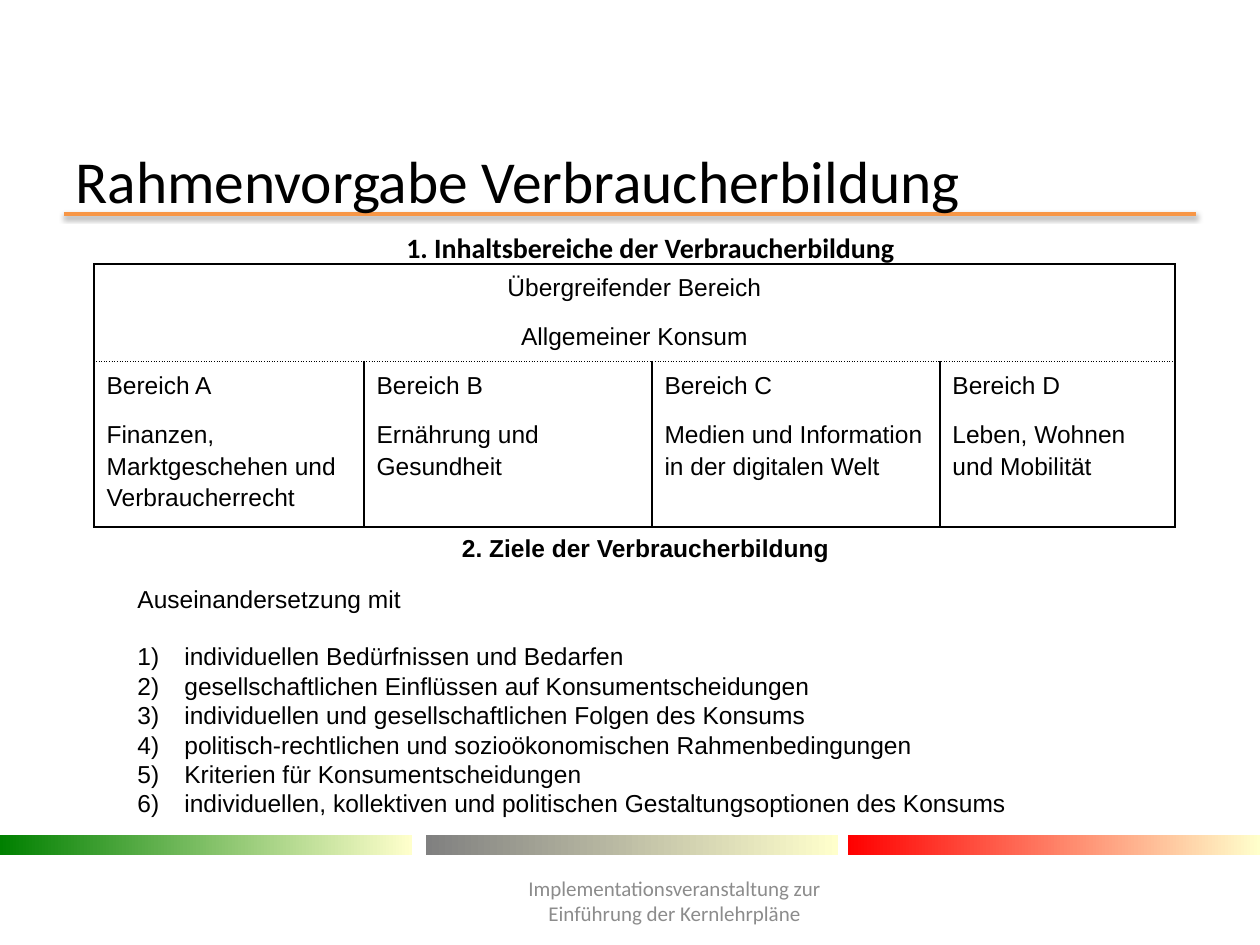
from lxml.etree import SubElement
from pptx import Presentation
from pptx.dml.color import RGBColor
from pptx.enum.shapes import MSO_CONNECTOR, MSO_SHAPE
from pptx.enum.text import MSO_ANCHOR, PP_ALIGN
from pptx.oxml.ns import qn
from pptx.util import Emu, Pt

BLACK = "000000"
CENTER = {"alignment": PP_ALIGN.CENTER}
SPACED = {"line_spacing": 1.15, "space_after": Pt(10)}


def px(length):
    return Emu(round(length * 914400 / 126))


def color(value):
    return RGBColor.from_string(value)


def assign(target, values):
    for name, value in values.items():
        setattr(target, name, value)


def add_xml(parent, tag, **attributes):
    return SubElement(parent, qn(tag), {key: str(value) for key, value in attributes.items()})


class SlideBuilder:
    body = {"name": "Arial", "size": Pt(14), "bold": False}

    def __init__(self, page):
        self.page = page

    def add_text(self, para, text, paragraph_format, font=None, ink=BLACK):
        assign(para, paragraph_format)
        span = para.add_run()
        span.text = text
        assign(span.font, {**self.body, **(font or {})})
        span.font.color.rgb = color(ink)

    def textbox(self, left, top, width, height, anchor=MSO_ANCHOR.TOP):
        box = self.page.shapes.add_textbox(px(left), px(top), px(width), px(height))
        assign(box.text_frame, {"word_wrap": True, "vertical_anchor": anchor})
        return box.text_frame

    def rule(self, left, right, y, ink, width):
        line = self.page.shapes.add_connector(
            MSO_CONNECTOR.STRAIGHT, px(left), px(y), px(right), px(y))
        line.line.color.rgb = color(ink)
        line.line.width = Pt(width)
        effects = add_xml(line._element.spPr, "a:effectLst")
        shadow = add_xml(effects, "a:outerShdw", blurRad=Pt(3.1), dist=Pt(1.6),
                         dir=5400000, rotWithShape=0)
        shade = add_xml(shadow, "a:srgbClr", val=BLACK)
        add_xml(shade, "a:alpha", val=38000)

    def gradient_bar(self, left, top, width, height, start, end):
        bar = self.page.shapes.add_shape(
            MSO_SHAPE.RECTANGLE, px(left), px(top), px(width), px(height))
        bar.shadow.inherit = False
        bar.line.fill.background()
        bar.fill.gradient()
        bar.fill.gradient_angle = 0
        for stop, position, ink in zip(bar.fill.gradient_stops, (0, 1), (start, end)):
            stop.position = position
            stop.color.rgb = color(ink)

    def borders(self, cell, dotted_side):
        properties = cell._tc.get_or_add_tcPr()
        for side in "LRTB":
            edge = add_xml(properties, f"a:ln{side}", w=Pt(1))
            add_xml(add_xml(edge, "a:solidFill"), "a:srgbClr", val=BLACK)
            add_xml(edge, "a:prstDash", val="sysDot" if side == dotted_side else "solid")
        cell.fill.background()

    def area_table(self, left, top, columns, rows, heading, areas):
        table = self.page.shapes.add_table(
            len(rows), len(columns), px(left), px(top), px(sum(columns)), px(sum(rows))).table
        assign(table, {"first_row": False, "horz_banding": False})
        for column, width in zip(table.columns, columns):
            column.width = px(width)
        for row, height, dotted_side in zip(table.rows, rows, "BT"):
            row.height = px(height)
            for cell in row.cells:
                self.borders(cell, dotted_side)
        table.cell(0, 0).merge(table.cell(0, len(columns) - 1))
        self.cell_text(table.cell(0, 0), heading, {**SPACED, **CENTER})
        for index, lines in enumerate(areas):
            self.cell_text(table.cell(1, index), lines, SPACED)

    def cell_text(self, cell, lines, paragraph_format):
        frame = cell.text_frame
        for index, text in enumerate(lines):
            para = frame.add_paragraph() if index else frame.paragraphs[0]
            self.add_text(para, text, paragraph_format)

    def numbered(self, frame, items):
        for index, text in enumerate(items):
            para = frame.add_paragraph()
            properties = para._p.get_or_add_pPr()
            properties.set("marL", str(px(47)))
            properties.set("indent", str(px(-47)))
            if index == 0:
                para.space_before = Pt(16)
            add_xml(properties, "a:buFont", typeface="Arial")
            add_xml(properties, "a:buAutoNum", type="arabicParenR")
            add_xml(add_xml(properties, "a:tabLst"), "a:tab", pos=px(63), algn="l")
            self.add_text(para, text, {})


def main():
    deck = Presentation()
    assign(deck, {"slide_width": px(1260), "slide_height": px(945)})
    slide = SlideBuilder(deck.slides.add_slide(deck.slide_layouts[6]))

    slide.rule(64, 1196, 214, "F79646", 2)
    for left, start in ((0, "008000"), (426, "808080"), (848, "FF0000")):
        slide.gradient_bar(left, 835, 412, 20, start, "FFFFCC")

    title = slide.textbox(63, 155, 1134, 49, MSO_ANCHOR.MIDDLE)
    slide.add_text(title.paragraphs[0], "Rahmenvorgabe Verbraucherbildung", {},
                   {"name": "Calibri", "size": Pt(34)})
    footer = slide.textbox(471, 876, 407, 50, MSO_ANCHOR.MIDDLE)
    slide.add_text(footer.paragraphs[0],
                   "Implementationsveranstaltung zur Einführung der Kernlehrpläne",
                   CENTER, {"name": "Calibri", "size": Pt(12)}, "8C8C8C")

    slide.area_table(
        94, 264, (270, 288, 288, 235), (93, 157),
        ("Übergreifender Bereich", "Allgemeiner Konsum"),
        (("Bereich A", "Finanzen, Marktgeschehen und Verbraucherrecht"),
         ("Bereich B", "Ernährung und Gesundheit"),
         ("Bereich C", "Medien und Information in der digitalen Welt"),
         ("Bereich D", "Leben, Wohnen und Mobilität")))

    contents = slide.textbox(125, 224, 1051, 47)
    slide.add_text(contents.paragraphs[0], "1. Inhaltsbereiche der Verbraucherbildung", CENTER,
                   {"name": "Calibri", "size": Pt(16), "bold": True})

    goals = slide.textbox(125, 522, 1041, 346)
    slide.add_text(goals.paragraphs[0], "2. Ziele der Verbraucherbildung",
                   {**SPACED, **CENTER}, {"bold": True})
    slide.add_text(goals.add_paragraph(), "Auseinandersetzung mit", {"line_spacing": 1.15})
    slide.numbered(goals, (
        "individuellen Bedürfnissen und Bedarfen",
        "gesellschaftlichen Einflüssen auf Konsumentscheidungen",
        "individuellen und gesellschaftlichen Folgen des Konsums",
        "politisch-rechtlichen und sozioökonomischen Rahmenbedingungen",
        "Kriterien für Konsumentscheidungen",
        "individuellen, kollektiven und politischen Gestaltungsoptionen des Konsums"))

    deck.save("out.pptx")


if __name__ == "__main__":
    main()
